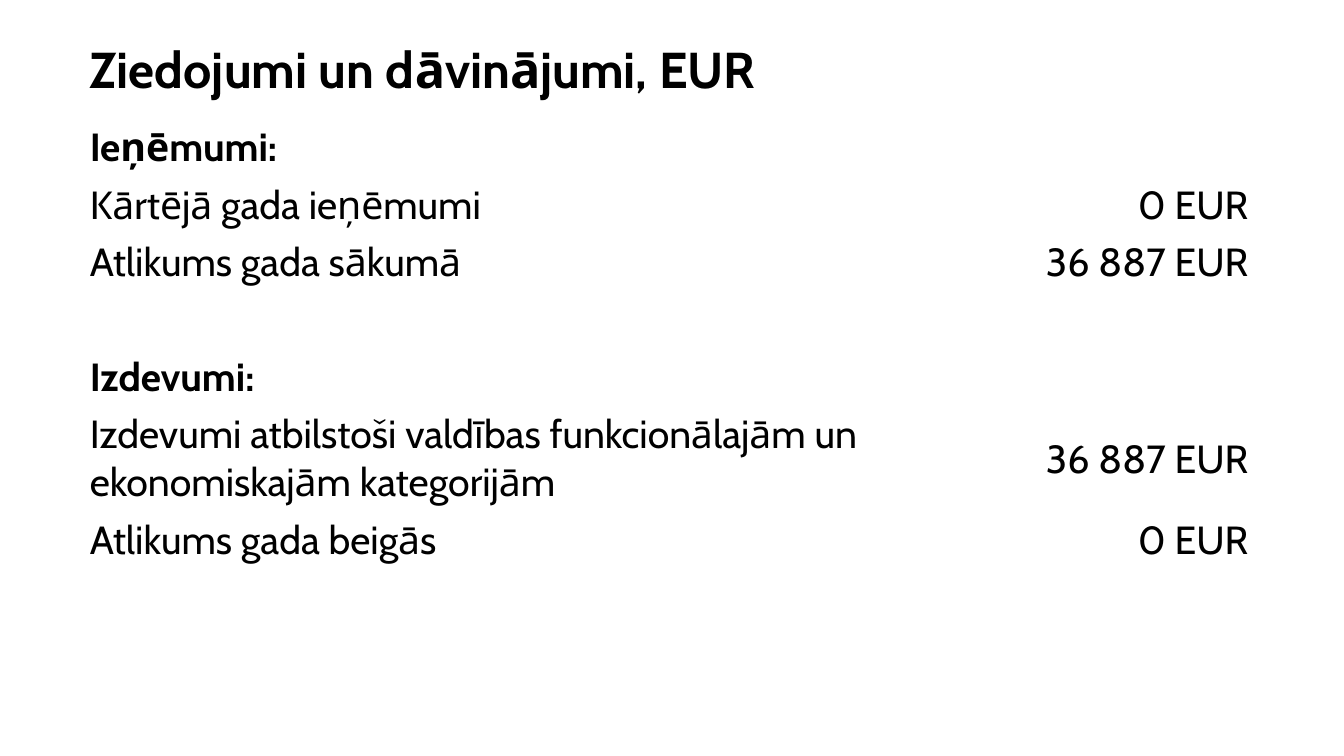
"""Build the slide on donations and gifts in EUR."""
import pptx
import pptx.util
import pptx.dml.color
import pptx.enum.text

Inches = pptx.util.Inches
ALIGN = pptx.enum.text.PP_ALIGN
ANCHOR = pptx.enum.text.MSO_ANCHOR

TITLE = "Ziedojumi un dāvinājumi, EUR"
ROWS = [
    ("Ieņēmumi:", ""),
    ("Kārtējā gada ieņēmumi", "0 EUR"),
    ("Atlikums gada sākumā", "36 887 EUR"),
    ("", ""),
    ("Izdevumi:", ""),
    ("Izdevumi atbilstoši valdības funkcionālajām un ekonomiskajām kategorijām", "36 887 EUR"),
    ("Atlikums gada beigās", "0 EUR"),
]
COLORS = {"text": "000000"}
FONT = "Cabin"
LEFT = 0.79
COLUMN_WIDTHS = (9.18, 2.51)
ROW_HEIGHT, TALL_ROW_HEIGHT = 0.57, 1.05
LINE_CHARS = 50


def write(tf, text, size, bold, align=ALIGN.LEFT):
    tf.text = text
    p = tf.paragraphs[0]
    p.alignment = align
    p.font.size = pptx.util.Pt(size)
    for r in p.runs:
        r.font.name = FONT
        r.font.size = pptx.util.Pt(size)
        r.font.bold = bold
        r.font.color.rgb = pptx.dml.color.RGBColor.from_string(COLORS["text"])


def add_title(s):
    tf = s.shapes.add_textbox(Inches(LEFT), Inches(0.24), Inches(11.37), Inches(0.79)).text_frame
    tf.word_wrap = True
    tf.vertical_anchor = ANCHOR.BOTTOM
    write(tf, TITLE, 36, True)


def add_budget_table(s):
    heights = [TALL_ROW_HEIGHT if len(label) > LINE_CHARS else ROW_HEIGHT for label, _ in ROWS]
    table = s.shapes.add_table(
        len(ROWS), len(COLUMN_WIDTHS), Inches(LEFT), Inches(1.18),
        Inches(sum(COLUMN_WIDTHS)), Inches(sum(heights))).table
    table.first_row = False
    table.horz_banding = False
    for column, width in zip(table.columns, COLUMN_WIDTHS):
        column.width = Inches(width)
    for row, height, (label, amount) in zip(table.rows, heights, ROWS):
        row.height = Inches(height)
        label_cell, amount_cell = row.cells
        for cell in row.cells:
            cell.fill.background()
        write(label_cell.text_frame, label, 28, label.endswith(":"))
        write(amount_cell.text_frame, amount, 28, False, ALIGN.RIGHT)
        amount_cell.vertical_anchor = ANCHOR.MIDDLE


def main():
    prs = pptx.Presentation()
    prs.slide_width, prs.slide_height = Inches(13.33), Inches(7.5)
    s = prs.slides.add_slide(prs.slide_layouts[6])
    add_title(s)
    add_budget_table(s)
    prs.save("out.pptx")


if __name__ == "__main__":
    main()
